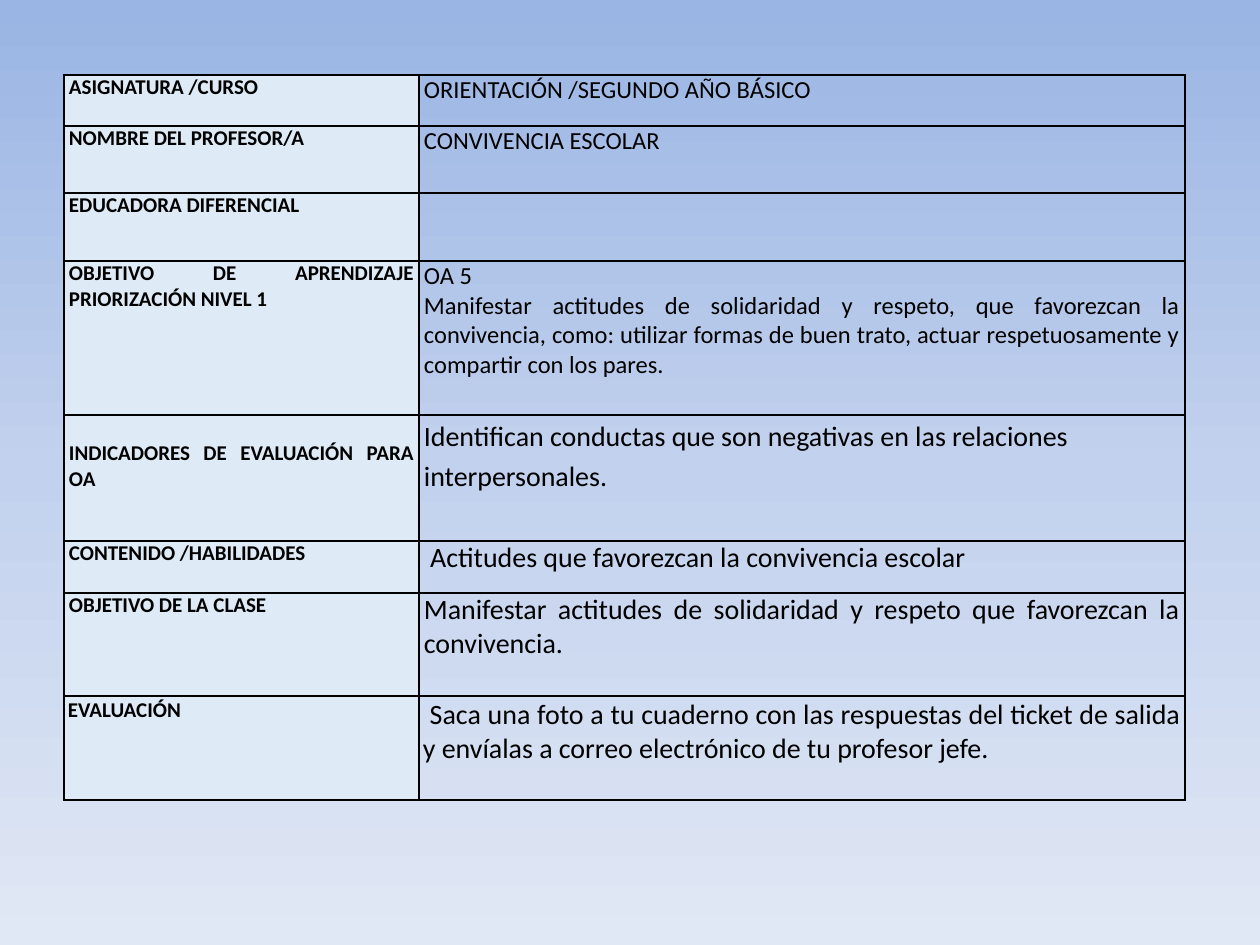
import copy

import lxml.etree
import pptx
import pptx.dml.color
import pptx.enum.text
import pptx.oxml.ns
import pptx.util

EMU_PER_PX = 914400 / 126
THEME = {
    "font": "Calibri",
    "text": "000000",
    "border": "000000",
    "label_fill": "DEEAF6",
    "background": [(0, "9AB5E4"), (0.5, "C2D1ED"), (1, "E1E8F5")],
    "label_size": 12,
    "border_width": 1,
}
COLUMN_WIDTHS = [355, 766]
# Row height, label, value paragraphs, value type size
ROWS = [
    (51, "ASIGNATURA /CURSO", "ORIENTACIÓN /SEGUNDO AÑO BÁSICO", 14),
    (67, "NOMBRE DEL PROFESOR/A", "CONVIVENCIA ESCOLAR", 14),
    (68, "EDUCADORA DIFERENCIAL", "", 14),
    (154, "OBJETIVO DE APRENDIZAJE PRIORIZACIÓN NIVEL 1",
     "OA 5\nManifestar actitudes de solidaridad y respeto, que favorezcan la convivencia, "
     "como: utilizar formas de buen trato, actuar respetuosamente y compartir con los pares.", 14),
    (126, "INDICADORES DE EVALUACIÓN PARA OA",
     "Identifican conductas que son negativas en las relaciones interpersonales.", 16),
    (52, "CONTENIDO /HABILIDADES", " Actitudes que favorezcan la convivencia escolar", 16),
    (103, "OBJETIVO DE LA CLASE",
     "Manifestar actitudes de solidaridad y respeto que favorezcan la convivencia.", 16),
    (104, "EVALUACIÓN",
     " Saca una foto a tu cuaderno con las respuestas del ticket de salida y envíalas "
     "a correo electrónico de tu profesor jefe.", 16),
]
INDICATORS_ROW = 4
EVALUATION_ROW = len(ROWS) - 1


def px(length):
    return pptx.util.Emu(round(length * EMU_PER_PX))


def add_borders(cell):
    qn = pptx.oxml.ns.qn
    properties = cell._tc.get_or_add_tcPr()
    for position, side in enumerate(("lnL", "lnR", "lnT", "lnB")):
        line = lxml.etree.Element(qn(f"a:{side}"), w=str(pptx.util.Pt(THEME["border_width"])))
        fill = lxml.etree.SubElement(line, qn("a:solidFill"))
        lxml.etree.SubElement(fill, qn("a:srgbClr"), val=THEME["border"])
        properties.insert(position, line)


deck = pptx.Presentation()
deck.slide_width = px(1260)
deck.slide_height = px(945)
page = deck.slides.add_slide(deck.slide_layouts[6])

# Background gradient, top to bottom
background = page.background.fill
background.gradient()
background.gradient_angle = 270
stop_list = page.element.find(".//" + pptx.oxml.ns.qn("a:gsLst"))
stop_list.append(copy.deepcopy(stop_list[0]))
for stop, (position, color) in zip(background.gradient_stops, THEME["background"]):
    stop.position = position
    stop.color.rgb = pptx.dml.color.RGBColor.from_string(color)

# Lesson table: labels on the left, values on the right
row_heights = [row[0] for row in ROWS]
table = page.shapes.add_table(
    len(ROWS), 2, px(64), px(75), px(sum(COLUMN_WIDTHS)), px(sum(row_heights))
).table
table.first_row = False
table.horz_banding = False
for column, width in zip(table.columns, COLUMN_WIDTHS):
    column.width = px(width)

for row_index, (height, label, value, value_size) in enumerate(ROWS):
    table.rows[row_index].height = px(height)
    is_evaluation = row_index == EVALUATION_ROW
    for column_index, text in enumerate((label, value)):
        is_label = column_index == 0
        cell = table.cell(row_index, column_index)
        cell.margin_left = cell.margin_right = px(4 if is_evaluation else 5)
        cell.margin_top = cell.margin_bottom = px(2 if is_evaluation else 0)
        if is_label:
            cell.fill.solid()
            cell.fill.fore_color.rgb = pptx.dml.color.RGBColor.from_string(THEME["label_fill"])
        else:
            cell.fill.background()
        add_borders(cell)

        cell.text_frame.text = text
        for para in cell.text_frame.paragraphs:
            para.alignment = pptx.enum.text.PP_ALIGN.JUSTIFY
            para.font.size = pptx.util.Pt(THEME["label_size"] if is_label else value_size)
            for span in para.runs:
                span.font.name = THEME["font"]
                span.font.size = para.font.size
                span.font.bold = is_label
                span.font.color.rgb = pptx.dml.color.RGBColor.from_string(THEME["text"])

# The indicators label sits one line lower and its value is set looser
table.cell(INDICATORS_ROW, 0).margin_top = px(26)
indicators = table.cell(INDICATORS_ROW, 1).text_frame.paragraphs[0]
indicators.alignment = pptx.enum.text.PP_ALIGN.LEFT
indicators.line_spacing = 1.15

deck.save("out.pptx")
